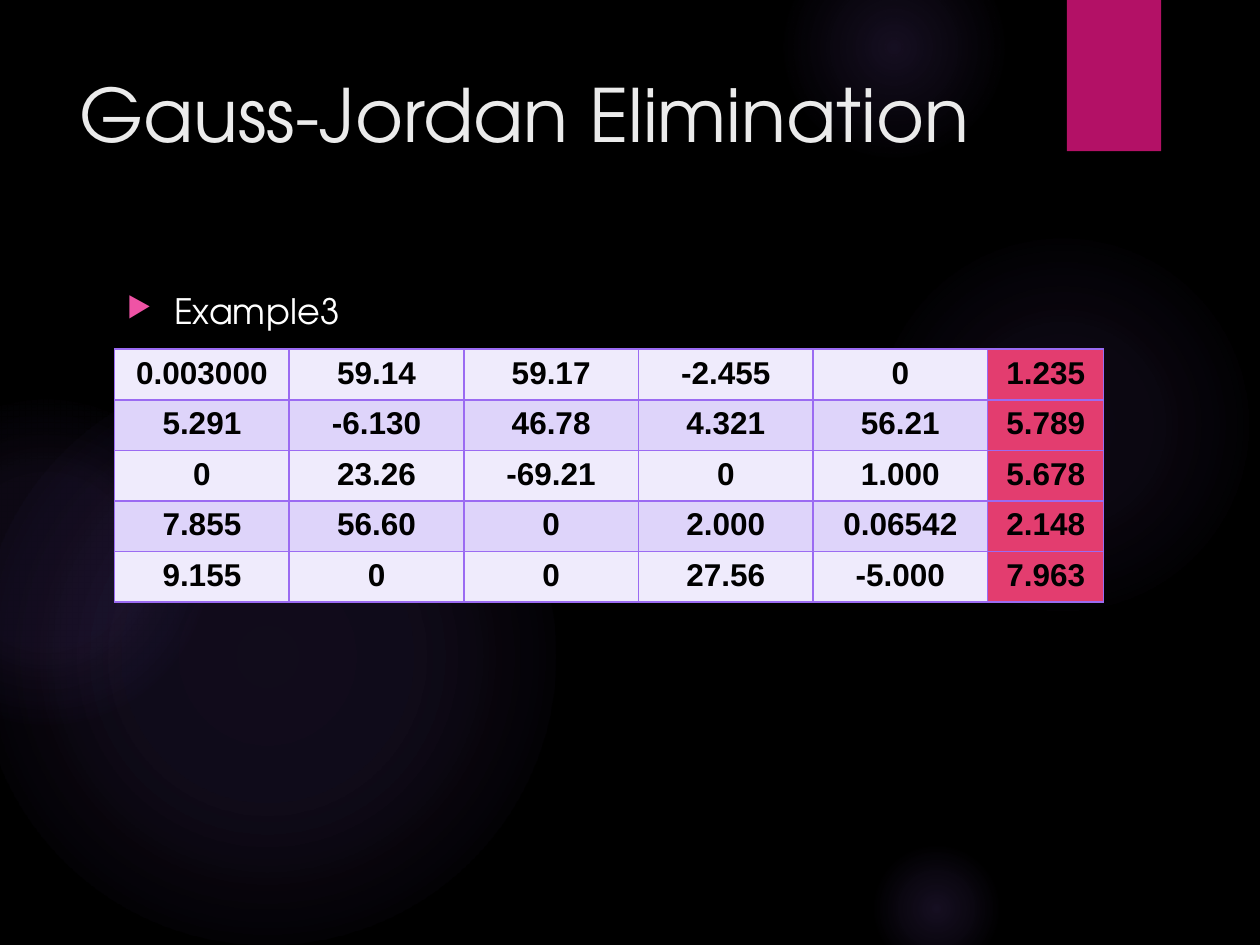
"""Build the Gauss-Jordan Elimination example slide."""
from typing import NamedTuple

from pptx import Presentation
from pptx.dml.color import RGBColor
from pptx.enum.shapes import MSO_SHAPE
from pptx.enum.text import PP_ALIGN
from pptx.oxml import parse_xml
from pptx.oxml.ns import nsdecls
from pptx.util import Cm, Pt

BLACK = RGBColor(0x00, 0x00, 0x00)
WHITE = RGBColor(0xFF, 0xFF, 0xFF)
TITLE_GRAY = RGBColor(0xEB, 0xEB, 0xEB)
VIOLET = RGBColor(0x9B, 0x6B, 0xF2)
MAGENTA = RGBColor(0xB3, 0x11, 0x66)
BULLET_PINK = RGBColor(0xEF, 0x53, 0xA5)
CONSTANTS_PINK = RGBColor(0xE3, 0x3D, 0x6F)
ROW_FILLS = (RGBColor(0xEF, 0xEB, 0xFC), RGBColor(0xDE, 0xD4, 0xFA))

HEADING_FONT = "TeX Gyre Adventor"
MATRIX_FONT = "Arial"
COEFFICIENT_WIDTH, CONSTANT_WIDTH, ROW_HEIGHT = 3.52, 2.34, 1.02

MATRIX = (
    ("0.003000", "59.14", "59.17", "-2.455", "0", "1.235"),
    ("5.291", "-6.130", "46.78", "4.321", "56.21", "5.789"),
    ("0", "23.26", "-69.21", "0", "1.000", "5.678"),
    ("7.855", "56.60", "0", "2.000", "0.06542", "2.148"),
    ("9.155", "0", "0", "27.56", "-5.000", "7.963"),
)


class Glow(NamedTuple):
    """A round glow: place in cm, and (position, opacity) stops in percent."""

    left: float
    top: float
    diameter: float
    stops: tuple


GLOWS = (
    Glow(17.5, 4.65, 7.82, ((0, 7), (36, 6), (69, 0))),
    Glow(15.8, -1.27, 4.45, ((0, 14), (36, 7), (73, 0))),
    Glow(17.5, 16.94, 2.74, ((0, 14), (36, 7), (66, 0))),
    Glow(-0.43, 7.42, 11.63, ((0, 11), (36, 10), (75, 0))),
    Glow(-2.34, 8.05, 6.55, ((0, 8), (36, 8), (72, 0))),
)


def add_plain_shape(slide, kind: MSO_SHAPE, left: float, top: float, width: float, height: float):
    """Add a shape without outline or shadow."""
    shape = slide.shapes.add_shape(kind, Cm(left), Cm(top), Cm(width), Cm(height))
    shape.shadow.inherit = False
    shape.line.fill.background()
    return shape


def draw_glow(slide, glow: Glow) -> None:
    """Draw a circle that fades out from its centre."""
    circle = add_plain_shape(
        slide, MSO_SHAPE.OVAL, glow.left, glow.top, glow.diameter, glow.diameter
    )
    stops = "".join(
        f'<a:gs pos="{position * 1000}"><a:srgbClr val="{VIOLET}">'
        f'<a:alpha val="{opacity * 1000}"/></a:srgbClr></a:gs>'
        for position, opacity in glow.stops
    )
    gradient = parse_xml(
        f'<a:gradFill {nsdecls("a")} rotWithShape="1"><a:gsLst>{stops}</a:gsLst>'
        '<a:path path="circle"><a:fillToRect l="50000" t="50000" r="50000" b="50000"/>'
        "</a:path></a:gradFill>"
    )
    circle.element.spPr.insert(2, gradient)


def style_font(font, name: str, size: int, color: RGBColor, bold: bool = False) -> None:
    """Set the look of a run."""
    font.name = name
    font.size = Pt(size)
    font.bold = bold
    font.color.rgb = color


def draw_heading(slide, text: str, box: tuple, size: int, color: RGBColor):
    """Add one line of heading text and return its paragraph."""
    frame = slide.shapes.add_textbox(*map(Cm, box)).text_frame
    frame.word_wrap = True
    frame.text = text
    paragraph = frame.paragraphs[0]
    style_font(paragraph.runs[0].font, HEADING_FONT, size, color)
    return paragraph


def add_bullet(paragraph) -> None:
    """Give a paragraph a pink triangle and a hanging indent."""
    properties = paragraph._p.get_or_add_pPr()
    properties.set("marL", str(Cm(0.95)))
    properties.set("indent", str(Cm(-0.95)))
    for element in (
        f'<a:buClr {nsdecls("a")}><a:srgbClr val="{BULLET_PINK}"/></a:buClr>',
        f'<a:buSzPct {nsdecls("a")} val="80000"/>',
        f'<a:buChar {nsdecls("a")} char="▶"/>',
    ):
        properties.append(parse_xml(element))


def fill_cell(cell, value: str, color: RGBColor) -> None:
    """Write a matrix entry with violet borders and a solid fill."""
    properties = cell._tc.get_or_add_tcPr()
    for side in ("lnL", "lnR", "lnT", "lnB"):
        properties.append(parse_xml(
            f'<a:{side} {nsdecls("a")} w="{Pt(1)}"><a:solidFill>'
            f'<a:srgbClr val="{VIOLET}"/></a:solidFill></a:{side}>'
        ))
    cell.fill.solid()
    cell.fill.fore_color.rgb = color
    cell.text_frame.text = value
    paragraph = cell.text_frame.paragraphs[0]
    paragraph.alignment = PP_ALIGN.CENTER
    style_font(paragraph.runs[0].font, MATRIX_FONT, 18, BLACK, bold=True)


def draw_matrix(slide, left: float, top: float) -> None:
    """Draw the augmented matrix, its last column holding the constants."""
    widths = [COEFFICIENT_WIDTH] * (len(MATRIX[0]) - 1) + [CONSTANT_WIDTH]
    matrix = slide.shapes.add_table(
        len(MATRIX), len(widths), Cm(left), Cm(top),
        Cm(sum(widths)), Cm(ROW_HEIGHT * len(MATRIX)),
    ).table
    matrix.first_row = False
    matrix.horz_banding = False
    for column, width in zip(matrix.columns, widths):
        column.width = Cm(width)
    for row_index, values in enumerate(MATRIX):
        matrix.rows[row_index].height = Cm(ROW_HEIGHT)
        row_fill = ROW_FILLS[row_index % 2]
        for column_index, value in enumerate(values):
            is_constant = column_index == len(widths) - 1
            fill_cell(
                matrix.cell(row_index, column_index), value,
                CONSTANTS_PINK if is_constant else row_fill,
            )


def main() -> None:
    """Assemble and save the slide."""
    presentation = Presentation()
    presentation.slide_width, presentation.slide_height = Cm(25.4), Cm(19.05)
    slide = presentation.slides.add_slide(presentation.slide_layouts[6])
    slide.background.fill.solid()
    slide.background.fill.fore_color.rgb = BLACK

    for glow in GLOWS:
        draw_glow(slide, glow)
    ribbon = add_plain_shape(slide, MSO_SHAPE.RECTANGLE, 21.51, 0, 1.9, 3.05)
    ribbon.fill.solid()
    ribbon.fill.fore_color.rgb = MAGENTA

    draw_heading(
        slide, "Gauss-Jordan Elimination", (1.35, 1.27, 19.61, 3.89), 42, TITLE_GRAY
    )
    example = draw_heading(slide, "Example3", (2.31, 5.72, 18.64, 11.66), 20, WHITE)
    add_bullet(example)
    draw_matrix(slide, 2.31, 7.04)
    presentation.save("out.pptx")


if __name__ == "__main__":
    main()
